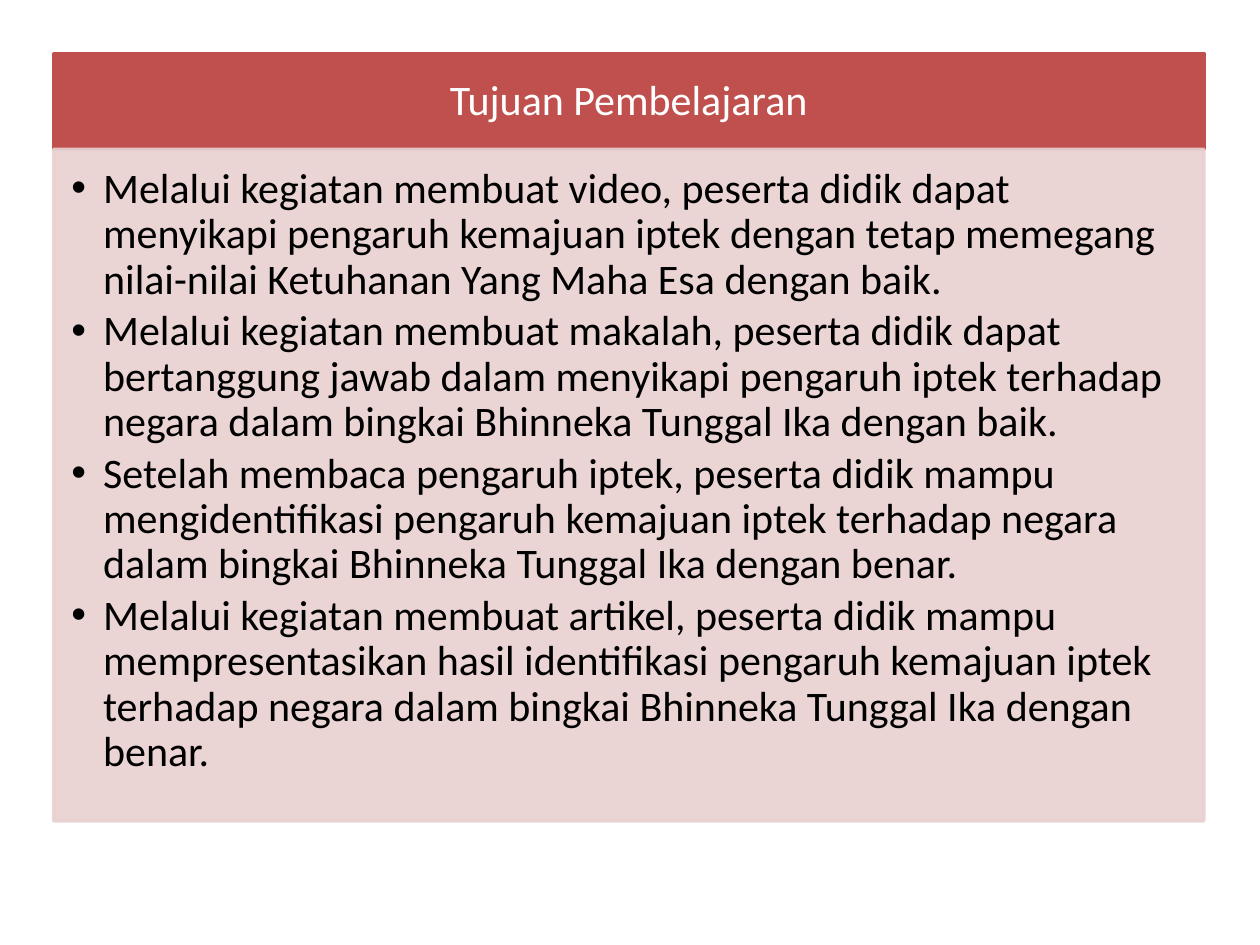
from dataclasses import dataclass

from lxml import etree
from pptx import Presentation
from pptx import util as u
from pptx.dml.color import RGBColor
from pptx.enum import shapes, text
from pptx.oxml.ns import qn


@dataclass(frozen=True)
class Theme:
    red: RGBColor = RGBColor(0xC0, 0x50, 0x4D)
    pink: RGBColor = RGBColor(0xE8, 0xD0, 0xD0)
    white: RGBColor = RGBColor(0xFF, 0xFF, 0xFF)
    black: RGBColor = RGBColor(0, 0, 0)
    font: str = "Calibri"
    size: u.Pt = u.Pt(24)


theme = Theme()
left, top, width = 1.08, 1.08, 23.19
head, body = 1.93, 13.54

title = ["Tujuan Pembelajaran"]
goals = [
    "Melalui kegiatan membuat video, peserta didik dapat menyikapi pengaruh kemajuan iptek "
    "dengan tetap memegang nilai-nilai Ketuhanan Yang Maha Esa dengan baik.",
    "Melalui kegiatan membuat makalah, peserta didik dapat bertanggung jawab dalam menyikapi "
    "pengaruh iptek terhadap negara dalam bingkai Bhinneka Tunggal Ika dengan baik.",
    "Setelah membaca pengaruh iptek, peserta didik mampu mengidentifikasi pengaruh kemajuan "
    "iptek terhadap negara dalam bingkai Bhinneka Tunggal Ika dengan benar.",
    "Melalui kegiatan membuat artikel, peserta didik mampu mempresentasikan hasil identifikasi "
    "pengaruh kemajuan iptek terhadap negara dalam bingkai Bhinneka Tunggal Ika dengan benar.",
]


def panel(group, y, height, fill, ink, lines, pads, anchor):
    box = group.shapes.add_shape(
        shapes.MSO_SHAPE.RECTANGLE, u.Cm(left), u.Cm(y), u.Cm(width), u.Cm(height))
    box.shadow.inherit = False
    box.fill.solid()
    box.fill.fore_color.rgb = fill
    box.line.color.rgb = fill
    box.line.width = u.Pt(2)
    frame = box.text_frame
    frame.word_wrap = True
    frame.vertical_anchor = anchor
    frame.margin_left, frame.margin_top, frame.margin_right, frame.margin_bottom = map(u.Cm, pads)
    frame.text = "\n".join(lines)
    for para in frame.paragraphs:
        para.line_spacing = 0.9
        para.alignment = text.PP_ALIGN.CENTER
        if lines is goals:
            para.alignment = text.PP_ALIGN.LEFT
            para.level = 1
            para.space_after = u.Pt(3.6)
            props = para._p.get_or_add_pPr()
            props.set("marL", str(u.Cm(0.64)))
            props.set("indent", str(u.Cm(-0.64)))
            etree.SubElement(props, qn("a:buFont"), typeface="Arial")
            etree.SubElement(props, qn("a:buChar"), char="•")
        para.font.name = theme.font
        para.font.size = theme.size
        para.font.color.rgb = ink
    return box


deck = Presentation()
deck.slide_width, deck.slide_height = u.Cm(25.4), u.Cm(19.05)
slide = deck.slides.add_slide(deck.slide_layouts[6])
group = slide.shapes.add_group_shape()

panel(group, top, head, theme.red, theme.white, title,
      (0.48, 0.28, 0.48, 0.28), text.MSO_ANCHOR.MIDDLE)
card = panel(group, top + head, body, theme.pink, theme.black, goals,
             (0.36, 0.36, 0.48, 0.53), text.MSO_ANCHOR.TOP)
for tint in card.element.spPr.iter(qn("a:srgbClr")):
    etree.SubElement(tint, qn("a:alpha"), val="90000")

deck.save("out.pptx")
